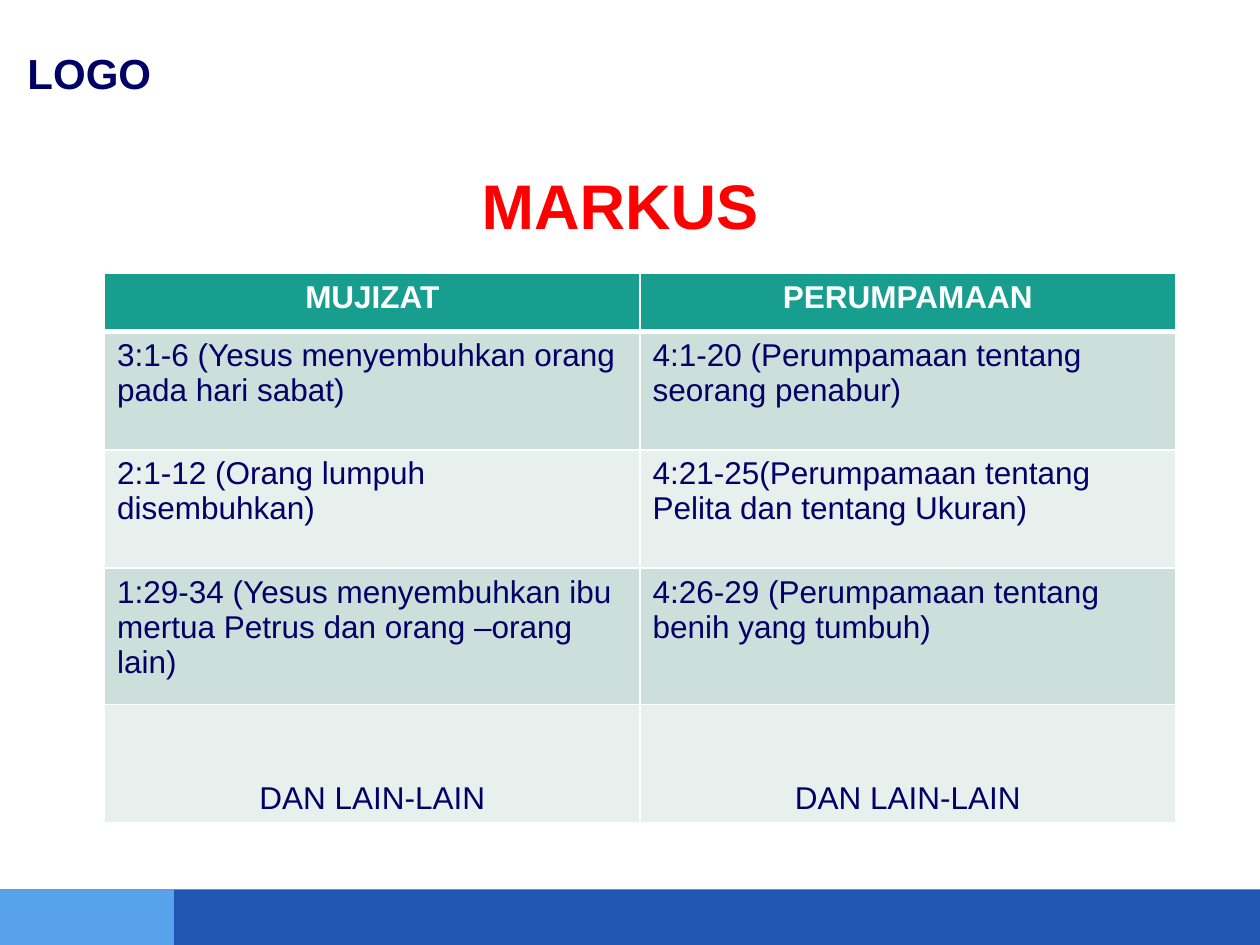
from dataclasses import dataclass

from lxml import etree
from pptx import Presentation
from pptx.dml.color import RGBColor
from pptx.enum.shapes import MSO_SHAPE
from pptx.enum.text import MSO_ANCHOR, PP_ALIGN
from pptx.oxml.ns import qn
from pptx.util import Inches, Pt


@dataclass(frozen=True)
class Theme:
    font: str = "Arial"
    ink: str = "000066"
    title: str = "FF0000"
    white: str = "FFFFFF"
    header: str = "189E8E"
    bands: tuple = ("CCDFDB", "E8F0EE")
    footer: str = "2256B4"
    footer_accent: str = "58A2EC"
    title_size: int = 36
    logo_size: int = 24
    table_size: int = 18


THEME = Theme()

HEADERS = ("MUJIZAT", "PERUMPAMAAN")
PASSAGES = (
    ("3:1-6 (Yesus menyembuhkan orang pada hari sabat)",
     "4:1-20 (Perumpamaan tentang seorang penabur)"),
    ("2:1-12 (Orang lumpuh disembuhkan)",
     "4:21-25(Perumpamaan tentang Pelita dan tentang Ukuran)"),
    ("1:29-34 (Yesus menyembuhkan ibu mertua Petrus dan orang –orang lain)",
     "4:26-29 (Perumpamaan tentang benih yang tumbuh)"),
)
CLOSING = ("DAN LAIN-LAIN",) * 2
ROW_HEIGHTS = (0.46, 0.94, 0.94, 1.08, 0.94)


def write(frame, text, size, color, bold=False, align=PP_ALIGN.LEFT):
    paragraph = frame.paragraphs[0]
    paragraph.text = text
    paragraph.alignment = align
    font = paragraph.font
    font.name, font.size, font.bold = THEME.font, Pt(size), bold
    font.color.rgb = RGBColor.from_string(color)


def add_label(slide, box, text, size, color, align=PP_ALIGN.LEFT,
              anchor=MSO_ANCHOR.TOP):
    frame = slide.shapes.add_textbox(*map(Inches, box)).text_frame
    frame.word_wrap = True
    frame.vertical_anchor = anchor
    write(frame, text, size, color, True, align)


def add_footer(slide, box):
    left, top, width, height = box
    for bar_width, color in ((width, THEME.footer), (1.38, THEME.footer_accent)):
        bar = slide.shapes.add_shape(
            MSO_SHAPE.RECTANGLE, *map(Inches, (left, top, bar_width, height)))
        bar.shadow.inherit = False
        bar.fill.solid()
        bar.fill.fore_color.rgb = RGBColor.from_string(color)
        bar.line.fill.background()


def set_borders(cell, top=1, bottom=1):
    """Draw white cell borders; they must precede the fill in the cell XML."""
    properties = cell._tc.get_or_add_tcPr()
    for side, points in (("L", 1), ("R", 1), ("T", top), ("B", bottom)):
        line = etree.SubElement(properties, qn(f"a:ln{side}"), w=str(Pt(points)))
        fill = etree.SubElement(line, qn("a:solidFill"))
        etree.SubElement(fill, qn("a:srgbClr"), val=THEME.white)


def add_passages_table(slide, box):
    rows = (HEADERS, *PASSAGES, CLOSING)
    last = len(rows) - 1
    table = slide.shapes.add_table(
        len(rows), len(HEADERS), *map(Inches, box)).table
    for row, height in zip(table.rows, ROW_HEIGHTS):
        row.height = Inches(height)
    for r, texts in enumerate(rows):
        is_header = r == 0
        fill = THEME.header if is_header else THEME.bands[(r - 1) % 2]
        color = THEME.white if is_header else THEME.ink
        align = PP_ALIGN.CENTER if r in (0, last) else PP_ALIGN.LEFT
        for c, text in enumerate(texts):
            cell = table.cell(r, c)
            set_borders(cell, top=3 if r == 1 else 1, bottom=3 if is_header else 1)
            cell.fill.solid()
            cell.fill.fore_color.rgb = RGBColor.from_string(fill)
            cell.vertical_anchor = MSO_ANCHOR.BOTTOM if r == last else MSO_ANCHOR.TOP
            write(cell.text_frame, text, THEME.table_size, color, is_header, align)


def main():
    prs = Presentation()
    prs.slide_width, prs.slide_height = Inches(10), Inches(7.5)
    slide = prs.slides.add_slide(prs.slide_layouts[6])
    add_footer(slide, (0, 7.06, 10, 0.44))
    add_label(slide, (0.12, 0.33, 1.33, 0.5), "LOGO", THEME.logo_size, THEME.ink)
    add_label(slide, (1.08, 1.33, 7.68, 0.58), "MARKUS", THEME.title_size,
              THEME.title, PP_ALIGN.CENTER, MSO_ANCHOR.MIDDLE)
    add_passages_table(slide, (0.83, 2.17, 8.5, sum(ROW_HEIGHTS)))
    prs.save("out.pptx")


if __name__ == "__main__":
    main()
